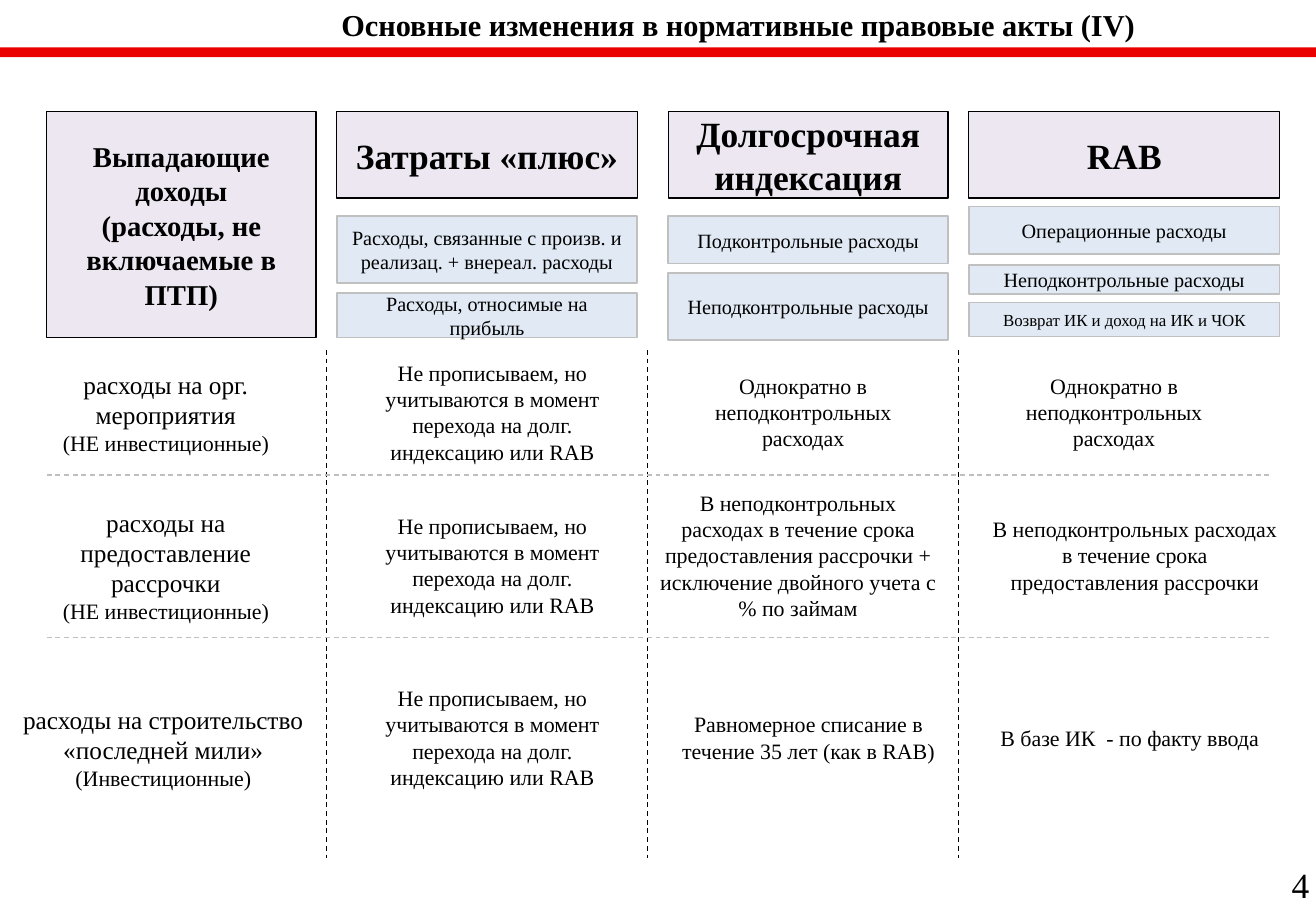
from lxml import etree
from pptx import Presentation
from pptx.dml.color import RGBColor
from pptx.enum.dml import MSO_LINE
from pptx.enum.shapes import MSO_CONNECTOR, MSO_SHAPE
from pptx.enum.text import MSO_ANCHOR, PP_ALIGN
from pptx.oxml.ns import qn
from pptx.util import Inches, Pt

RECTANGLE = MSO_SHAPE.RECTANGLE
STRAIGHT = MSO_CONNECTOR.STRAIGHT
DASH = MSO_LINE.DASH
TOP, MIDDLE = MSO_ANCHOR.TOP, MSO_ANCHOR.MIDDLE
LEFT, CENTER = PP_ALIGN.LEFT, PP_ALIGN.CENTER

FONT = "Times New Roman"
BLACK = RGBColor(0x00, 0x00, 0x00)
RED = RGBColor(0xEB, 0x00, 0x00)
LILAC = RGBColor(0xE6, 0xE0, 0xEC)
BLUE = RGBColor(0xB9, 0xCD, 0xE5)
SILVER = RGBColor(0xC0, 0xC0, 0xC0)
GREY = RGBColor(0xBF, 0xBF, 0xBF)

# Grid: 254 columns by 750 rows
WIDTH, HEIGHT = Inches(10.84), Inches(7.5)
COL, ROW = WIDTH / 254, HEIGHT / 750

# Method columns: left, width, heading, expense groups (top, height, text, size)
METHODS = [
    (65, 58, "Затраты «плюс»", [
        (178, 55, "Расходы, связанные с произв. и реализац. + внереал. расходы", 12),
        (241, 37, "Расходы, относимые на прибыль", 12)]),
    (129, 54, "Долгосрочная индексация", [
        (178, 39, "Подконтрольные расходы", 12),
        (225, 55, "Неподконтрольные расходы", 12)]),
    (187, 60, "RAB", [
        (170, 39, "Операционные расходы", 12),
        (218, 24, "Неподконтрольные расходы", 12),
        (249, 28, "Возврат ИК и доход на ИК и ЧОК", 10)]),
]

# Row labels: left, top, width, main lines, remark
LABELS = [
    (3, 312, 58, ["расходы на орг. мероприятия"], "(НЕ инвестиционные)"),
    (3, 438, 58, ["расходы на предоставление рассрочки"], "(НЕ инвестиционные)"),
    (0, 588, 63, ["расходы на строительство", "«последней мили»"], "(Инвестиционные)"),
]

# Treatment of each expense under each method: left, top, width, text
COST_PLUS = "Не прописываем, но учитываются в момент перехода на долг. индексацию или RAB"
ONE_OFF = "Однократно в неподконтрольных расходах"
INSTALMENTS = "В неподконтрольных расходах в течение срока предоставления рассрочки"
TREATMENTS = [
    (69, 288, 52, COST_PLUS),
    (129, 288, 52, ONE_OFF),
    (189, 288, 52, ONE_OFF),
    (69, 414, 52, COST_PLUS),
    (125, 406, 58, INSTALMENTS + " + исключение двойного учета с % по займам"),
    (189, 406, 60, INSTALMENTS),
    (69, 556, 52, COST_PLUS),
    (127, 556, 58, "Равномерное списание в течение 35 лет (как в RAB)"),
    (187, 556, 62, "В базе ИК  - по факту ввода"),
]


def place(left, top, width, height):
    return [round(v) for v in (left * COL, top * ROW, width * COL, height * ROW)]


def write(shape, lines, size=13, bold=False, align=CENTER, anchor=MIDDLE, last_size=None):
    """Fill a shape with one paragraph per line; the last may have its own size."""
    frame = shape.text_frame
    frame.word_wrap = True
    frame.vertical_anchor = anchor
    for index, line in enumerate(lines):
        paragraph = frame.add_paragraph() if index else frame.paragraphs[0]
        paragraph.alignment = align
        run = paragraph.add_run()
        run.text = line
        is_last = index == len(lines) - 1
        run.font.size = Pt(last_size if last_size and is_last else size)
        run.font.bold = bold
        run.font.name = FONT
        run.font.color.rgb = BLACK


def add_text(slide, area, lines, **style):
    write(slide.shapes.add_textbox(*place(*area)), lines, **style)


def add_box(slide, area, fill, opacity=100, border=None, border_width=0.75):
    box = slide.shapes.add_shape(RECTANGLE, *place(*area))
    box.shadow.inherit = False
    box.fill.solid()
    box.fill.fore_color.rgb = fill
    if opacity < 100:
        color = box.fill._xPr.find(qn("a:solidFill"))[0]
        etree.SubElement(color, qn("a:alpha")).set("val", str(opacity * 1000))
    if border is None:
        box.line.fill.background()
    else:
        box.line.color.rgb = border
        box.line.width = Pt(border_width)
    return box


def add_heading(slide, area, lines, size):
    write(add_box(slide, area, LILAC, 75, BLACK), lines, size=size, bold=True)


def add_divider(slide, x1, y1, x2, y2, color):
    start_x, start_y, end_x, end_y = place(x1, y1, x2, y2)
    divider = slide.shapes.add_connector(STRAIGHT, start_x, start_y, end_x, end_y)
    divider.line.color.rgb = color
    divider.line.width = Pt(0.75)
    divider.line.dash_style = DASH
    etree.SubElement(divider._element.spPr, qn("a:effectLst"))


def main():
    deck = Presentation()
    deck.slide_width, deck.slide_height = WIDTH, HEIGHT
    slide = deck.slides.add_slide(deck.slide_layouts[6])

    # Title and red band
    add_box(slide, (0, 39, 254, 8), RED)
    add_text(slide, (31, 0, 223, 40),
             ["Основные изменения в нормативные правовые акты (IV)"],
             size=18, bold=True, anchor=TOP)

    # Headings and expense groups
    add_heading(slide, (9, 92, 52, 186),
                ["Выпадающие доходы", "(расходы, не включаемые в ПТП)"], 17)
    for left, width, heading, groups in METHODS:
        add_heading(slide, (left, 92, width, 71), [heading], 21)
        for top, height, text, size in groups:
            group = add_box(slide, (left, top, width, height), BLUE, 42, SILVER, 1)
            write(group, [text], size=size)

    # Dashed dividers
    for x in (63, 125, 185):
        add_divider(slide, x, 288, x, 706, BLACK)
    for y in (391, 525):
        add_divider(slide, 9, y, 245, y, GREY)

    # Table body
    for left, top, width, lines, remark in LABELS:
        add_text(slide, (left, top, width, 55), lines + [remark], size=15, last_size=13)
    for left, top, width, text in TREATMENTS:
        add_text(slide, (left, top, width, 102), [text])

    # Page number
    add_text(slide, (247, 706, 7, 46), ["4"], size=21, align=LEFT, anchor=TOP)

    deck.save("out.pptx")


if __name__ == "__main__":
    main()
